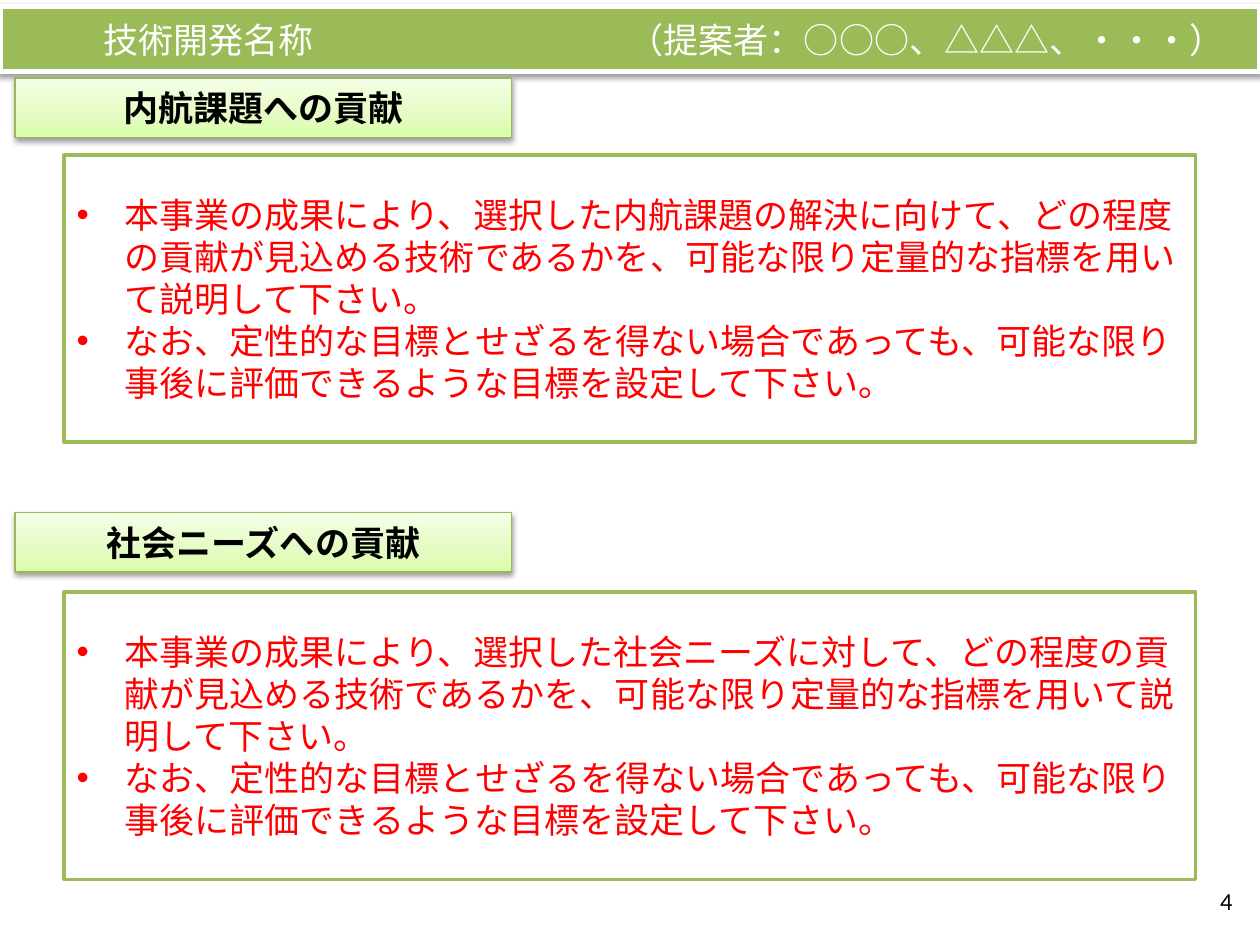
from lxml import etree
from pptx import Presentation
from pptx.dml.color import RGBColor
from pptx.enum.shapes import MSO_SHAPE
from pptx.enum.text import MSO_ANCHOR, PP_ALIGN
from pptx.oxml.ns import qn
from pptx.util import Inches, Pt

RECTANGLE = MSO_SHAPE.RECTANGLE
MIDDLE = MSO_ANCHOR.MIDDLE
LEFT, CENTER, RIGHT = PP_ALIGN.LEFT, PP_ALIGN.CENTER, PP_ALIGN.RIGHT

FONT = "Calibri"
GREEN, WHITE, BLACK, RED = "9BBB59", "FFFFFF", "000000", "FF0000"
HEADING_LINE = "98B955"
HEADING_STOPS = [(0, "DAFDA7"), (35, "E4FCC2"), (100, "F5FFE7")]

GOAL_NOTE = ("なお、定性的な目標とせざるを得ない場合であっても、可能な限り"
             "事後に評価できるような目標を設定して下さい。")
SECTIONS = [
    (0.62, 1.23, "内航課題への貢献", "内航課題の解決に向けて"),
    (4.07, 4.7, "社会ニーズへの貢献", "社会ニーズに対して"),
]


def rgb(value):
    return RGBColor.from_string(value)


def add_xml(parent, tag, **attributes):
    return etree.SubElement(parent, qn(tag), attributes)


class SlideBuilder:
    def __init__(self, slide):
        self.slide = slide

    def rectangle(self, left, top, width, height, line, weight, fill=None):
        shape = self.slide.shapes.add_shape(
            RECTANGLE, Inches(left), Inches(top), Inches(width), Inches(height))
        shape.shadow.inherit = False
        if fill:
            shape.fill.solid()
            shape.fill.fore_color.rgb = rgb(fill)
        shape.line.color.rgb = rgb(line)
        shape.line.width = Pt(weight)
        shape.text_frame.word_wrap = True
        shape.text_frame.vertical_anchor = MIDDLE
        return shape

    def cast_shadow(self, shape):
        effects = shape._element.spPr.find(qn("a:effectLst"))
        shadow = add_xml(effects, "a:outerShdw", blurRad=str(Pt(3.1)),
                         dist=str(Pt(1.6)), dir="5400000", rotWithShape="0")
        color = add_xml(shadow, "a:srgbClr", val=BLACK)
        add_xml(color, "a:alpha", val="38000")

    def add_text(self, paragraph, text, color, size=20, bold=False, align=LEFT):
        paragraph.alignment = align
        run = paragraph.add_run()
        run.text = text
        run.font.name = FONT
        run.font.size = Pt(size)
        run.font.bold = bold
        run.font.color.rgb = rgb(color)

    def title_bar(self, project, proposers):
        """Set the project name and, at a tab stop, the proposers."""
        bar = self.rectangle(0, 0.05, 10, 0.52, WHITE, 3, GREEN)
        self.cast_shadow(bar)
        bar.text_frame.margin_left = Inches(0.82)
        paragraph = bar.text_frame.paragraphs[0]
        self.add_text(paragraph, project + "\t", WHITE)
        self.add_text(paragraph, proposers, WHITE)
        tabs = add_xml(paragraph._p.get_or_add_pPr(), "a:tabLst")
        add_xml(tabs, "a:tab", pos=str(Inches(4.17)), algn="l")

    def heading(self, top, text):
        box = self.rectangle(0.12, top, 3.94, 0.47, HEADING_LINE, 0.75)
        box.fill.gradient()
        box.fill.gradient_angle = 90
        stops = box._element.spPr.find(qn("a:gradFill")).find(qn("a:gsLst"))
        for stop in list(stops):
            stops.remove(stop)
        for percent, color in HEADING_STOPS:
            stop = add_xml(stops, "a:gs", pos=str(percent * 1000))
            add_xml(stop, "a:srgbClr", val=color)
        self.cast_shadow(box)
        self.add_text(box.text_frame.paragraphs[0], text, BLACK, bold=True, align=CENTER)

    def bullet_box(self, top, items):
        frame = self.rectangle(0.51, top, 8.98, 2.28, GREEN, 2, WHITE).text_frame
        for index, item in enumerate(items):
            paragraph = frame.add_paragraph() if index else frame.paragraphs[0]
            self.add_text(paragraph, item, RED)
            properties = paragraph._p.get_or_add_pPr()
            properties.set("marL", str(Inches(0.38)))
            properties.set("indent", str(Inches(-0.38)))
            add_xml(properties, "a:buFont", typeface="Arial")
            add_xml(properties, "a:buChar", char="•")

    def page_number(self, number):
        frame = self.slide.shapes.add_textbox(
            Inches(7.55), Inches(6.95), Inches(2.33), Inches(0.4)).text_frame
        frame.word_wrap = True
        frame.vertical_anchor = MIDDLE
        self.add_text(frame.paragraphs[0], str(number), BLACK, size=14, align=RIGHT)


def main():
    deck = Presentation()
    deck.slide_width, deck.slide_height = Inches(10), Inches(7.5)
    builder = SlideBuilder(deck.slides.add_slide(deck.slide_layouts[6]))

    builder.title_bar("技術開発名称", "（提案者：○○○、△△△、・・・）")
    for heading_top, box_top, heading, target in SECTIONS:
        builder.heading(heading_top, heading)
        contribution = (f"本事業の成果により、選択した{target}、どの程度の貢献が見込める"
                        "技術であるかを、可能な限り定量的な指標を用いて説明して下さい。")
        builder.bullet_box(box_top, [contribution, GOAL_NOTE])
    builder.page_number(4)
    deck.save("out.pptx")


if __name__ == "__main__":
    main()
